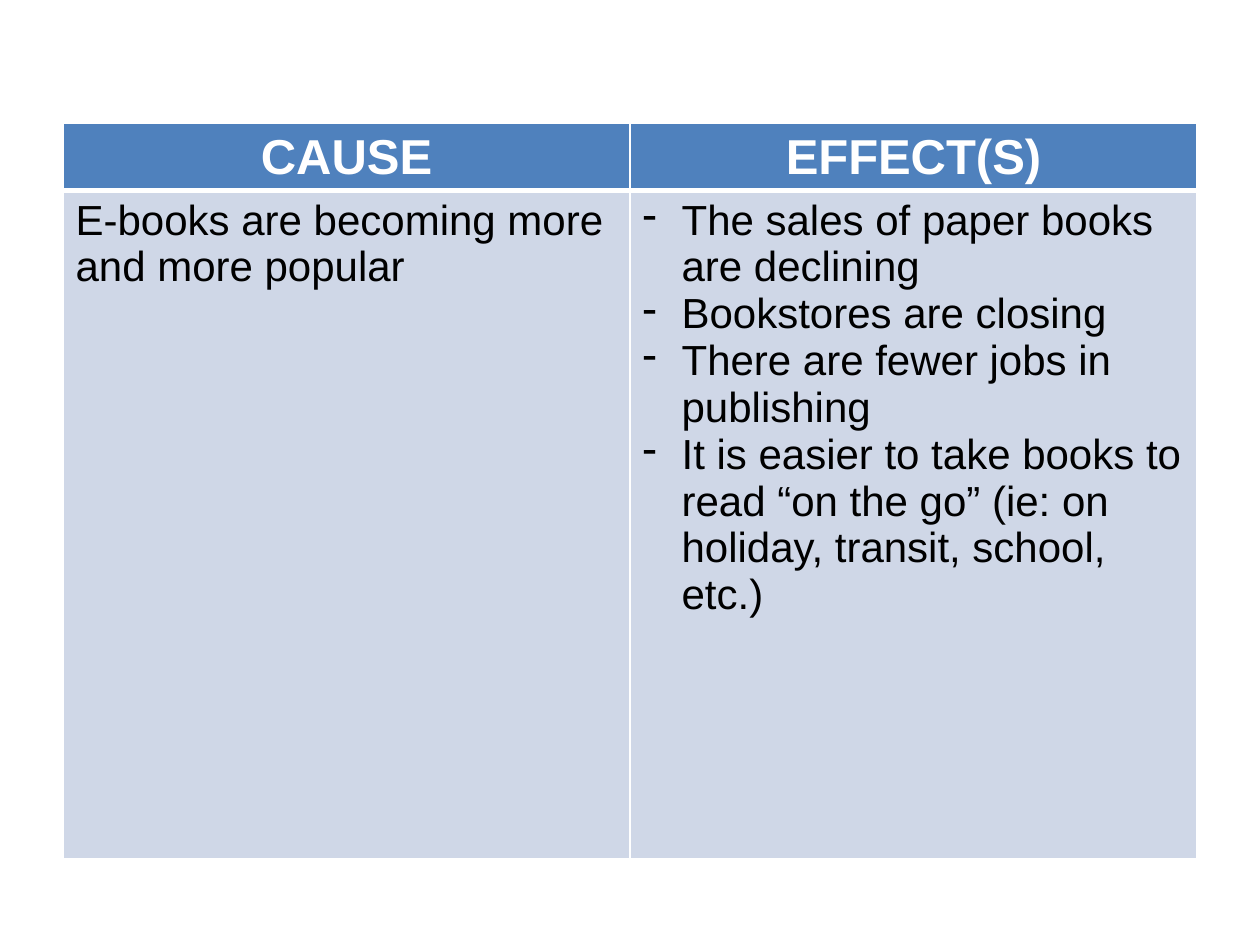
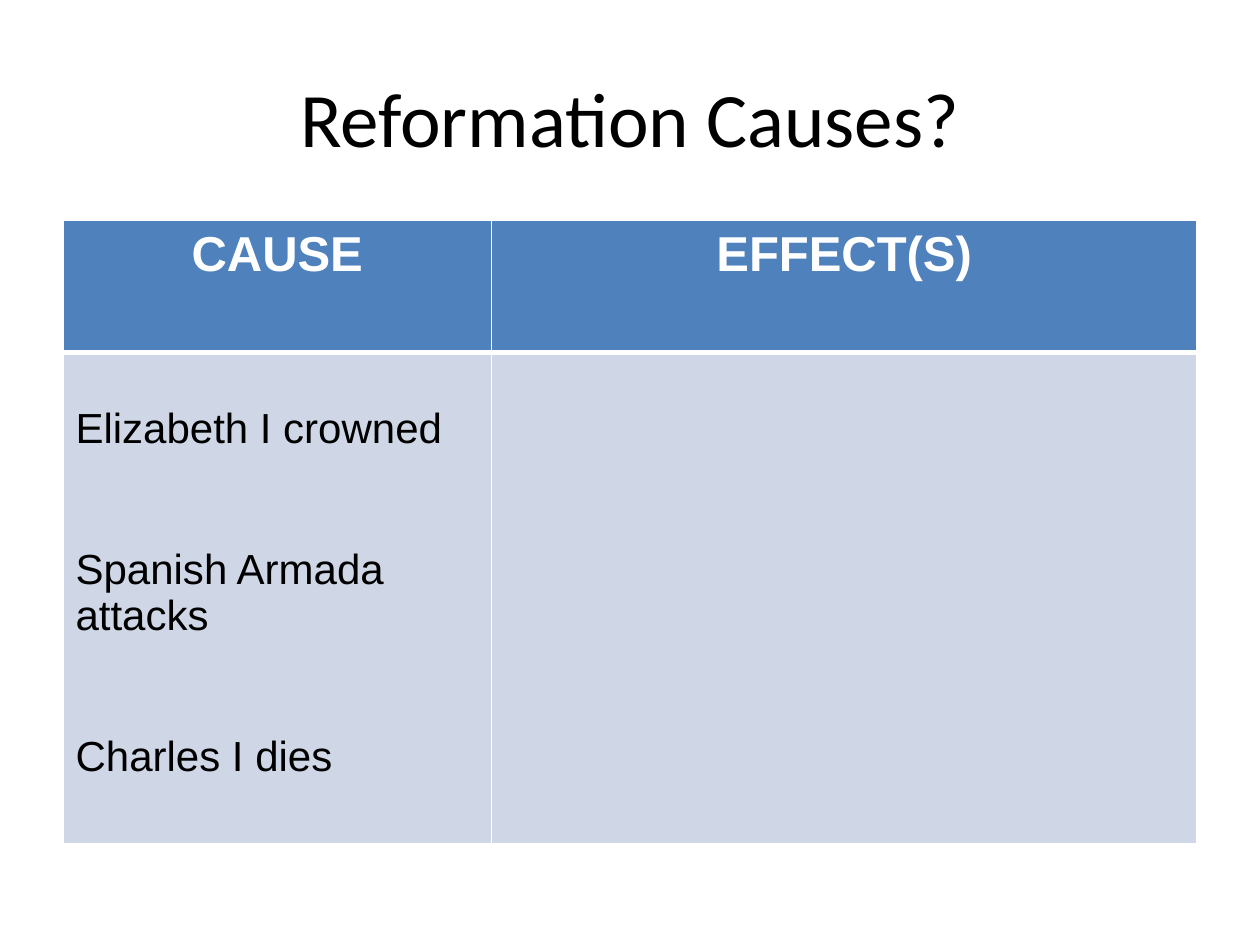
from dataclasses import dataclass

from lxml import etree
from pptx import Presentation
from pptx import util as u
from pptx.dml import color
from pptx.enum import text
from pptx.oxml import ns


@dataclass(frozen=True)
class Theme:
    white: str = "FFFFFF"
    ink: str = "000000"
    header_fill: str = "4F81BD"
    body_fill: str = "CFD7E7"
    title_font: str = "Calibri"
    table_font: str = "Arial"
    title_size: int = 44
    header_size: int = 28
    body_size: int = 24
    thin: int = 1
    thick: int = 3
    left: float = 0.5
    width: float = 9


HEADINGS = ("CAUSE", "EFFECT(S)")


class Deck:
    def __init__(self, theme):
        self.theme = theme
        self.prs = Presentation()
        self.prs.slide_width, self.prs.slide_height = u.Inches(10), u.Inches(7.5)
        self.slide = None

    def new_slide(self):
        self.slide = self.prs.slides.add_slide(self.prs.slide_layouts[6])

    def style(self, paragraph, font, size, ink, bold=False, centred=False):
        paragraph.font.name = font
        paragraph.font.size = u.Pt(size)
        paragraph.font.bold = bold
        paragraph.font.color.rgb = color.RGBColor.from_string(ink)
        paragraph.alignment = text.PP_ALIGN.CENTER if centred else text.PP_ALIGN.LEFT

    def title(self, wording):
        t = self.theme
        heading = self.slide.shapes.add_textbox(
            u.Inches(t.left), u.Inches(0.3), u.Inches(t.width), u.Inches(1.25))
        frame = heading.text_frame
        frame.word_wrap = True
        frame.vertical_anchor = text.MSO_ANCHOR.MIDDLE
        frame.text = wording
        self.style(frame.paragraphs[0], t.title_font, t.title_size, t.ink, centred=True)

    def dash(self, paragraph):
        props = paragraph._p.get_or_add_pPr()
        indent = u.Inches(0.31)
        props.set("marL", str(indent))
        props.set("indent", str(-indent))
        bullet = etree.Element(ns.qn("a:buChar"), char="-")
        props.insert(0, bullet)

    def borders(self, cell, widths):
        props = cell._tc.get_or_add_tcPr()
        for position, (side, points) in enumerate(widths.items()):
            line = etree.Element(ns.qn(f"a:ln{side}"), w=str(u.Pt(points)))
            fill = etree.SubElement(line, ns.qn("a:solidFill"))
            etree.SubElement(fill, ns.qn("a:srgbClr"), val=self.theme.white)
            props.insert(position, line)

    def fill(self, cell, shade):
        cell.fill.solid()
        cell.fill.fore_color.rgb = color.RGBColor.from_string(shade)

    def header_cell(self, cell, wording):
        t = self.theme
        cell.text = wording
        self.style(cell.text_frame.paragraphs[0], t.table_font, t.header_size,
                   t.white, bold=True, centred=True)
        self.fill(cell, t.header_fill)
        self.borders(cell, {"L": t.thin, "R": t.thin, "T": t.thin, "B": t.thick})

    def body_cell(self, cell, entries, dashed, gap):
        t = self.theme
        cell.text = "\n".join(entries)
        for index, paragraph in enumerate(cell.text_frame.paragraphs):
            self.style(paragraph, t.table_font, t.body_size, t.ink)
            if index and gap:
                paragraph.space_before = u.Pt(gap)
            if dashed:
                self.dash(paragraph)
        self.fill(cell, t.body_fill)
        self.borders(cell, {"L": t.thin, "R": t.thin, "B": t.thin})

    def cause_effect_table(self, top, cause_width, row_heights, causes, effects=(),
                           cause_gap=0, cause_inset=0.05):
        t = self.theme
        table = self.slide.shapes.add_table(
            2, 2, u.Inches(t.left), u.Inches(top),
            u.Inches(t.width), u.Inches(sum(row_heights))).table
        for column, width in zip(table.columns, (cause_width, t.width - cause_width)):
            column.width = u.Inches(width)
        for row, height in zip(table.rows, row_heights):
            row.height = u.Inches(height)
        for index, heading in enumerate(HEADINGS):
            self.header_cell(table.cell(0, index), heading)
        self.body_cell(table.cell(1, 0), causes, dashed=False, gap=cause_gap)
        table.cell(1, 0).margin_top = u.Inches(cause_inset)
        self.body_cell(table.cell(1, 1), effects, dashed=bool(effects), gap=0)


def main():
    deck = Deck(Theme())

    deck.new_slide()
    deck.cause_effect_table(
        top=0.98, cause_width=4.5, row_heights=(0.53, 5.3),
        causes=["E-books are becoming more and more popular"],
        effects=[
            "The sales of paper books are declining",
            "Bookstores are closing",
            "There are fewer jobs in publishing",
            "It is easier to take books to read “on the go” "
            "(ie: on holiday, transit, school, etc.)",
        ])

    deck.new_slide()
    deck.title("Reformation Causes?")
    deck.cause_effect_table(
        top=1.75, cause_width=3.4, row_heights=(1.05, 3.9),
        causes=["Elizabeth I crowned", "Spanish Armada attacks", "Charles I dies"],
        cause_gap=53.5, cause_inset=0.42)

    deck.prs.save("out.pptx")


if __name__ == "__main__":
    main()
